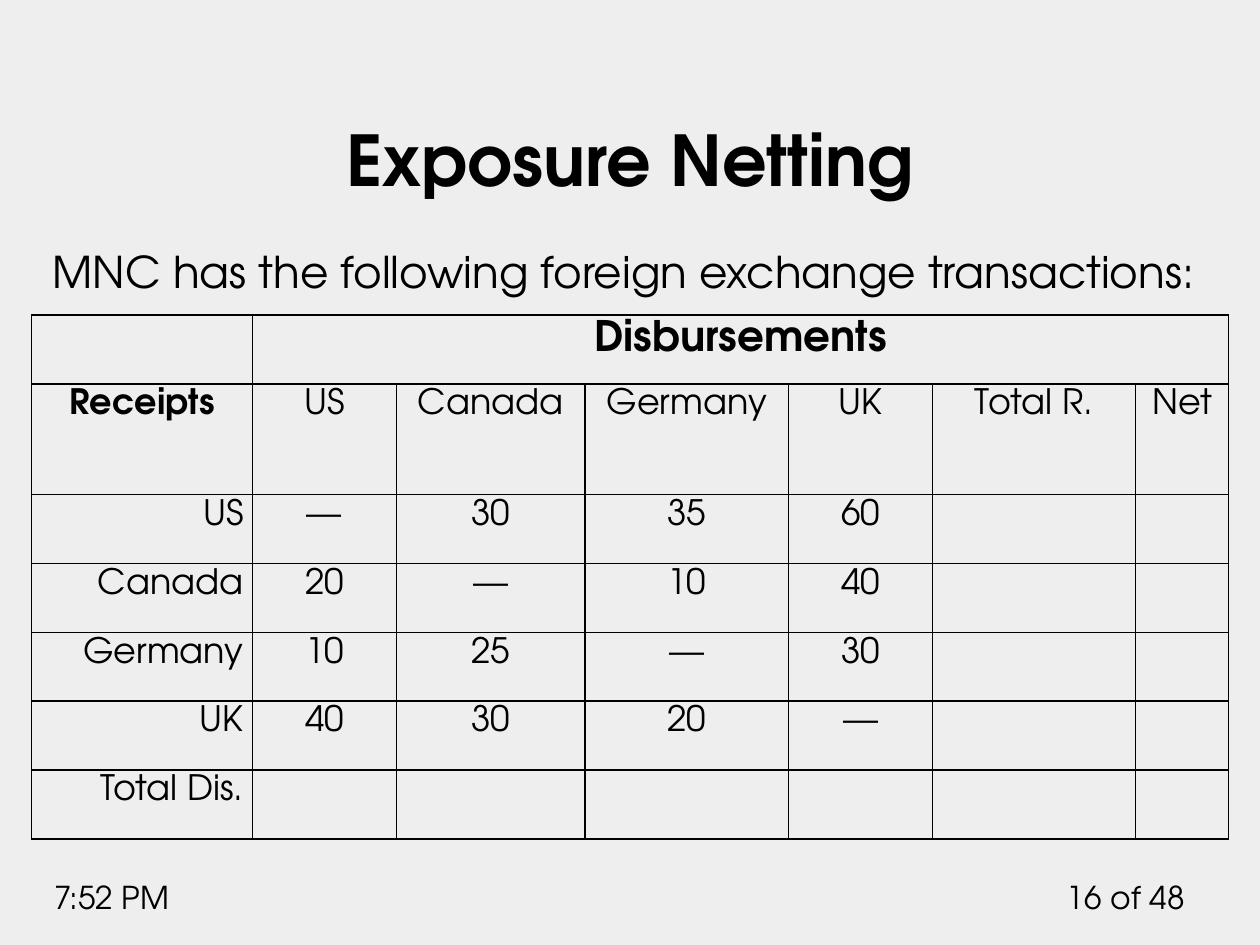
from lxml.etree import SubElement
from pptx import Presentation
from pptx.dml.color import RGBColor
from pptx.enum.text import MSO_ANCHOR, MSO_AUTO_SIZE, PP_ALIGN
from pptx.oxml import parse_xml
from pptx.oxml.ns import nsdecls, qn
from pptx.util import Cm, Pt

TITLE = "Exposure Netting"
INTRO = "MNC has the following foreign exchange transactions:"
TIME, PAGE = "7:52 PM", "16 of 48"
TABLE_ROWS = [
    ["", "Disbursements"],
    ["Receipts", "US", "Canada", "Germany", "UK", "Total R.", "Net"],
    ["US", "—", "30", "35", "60"],
    ["Canada", "20", "—", "10", "40"],
    ["Germany", "10", "25", "—", "30"],
    ["UK", "40", "30", "20", "—"],
    ["Total Dis."],
]
COLUMN_WIDTHS = [4.45, 2.9, 3.8, 4.11, 2.9, 4.09, 1.88]
ROW_HEIGHT, HEADER_HEIGHT = 1.39, 2.23
FONT = "TeX Gyre Adventor"
COLORS = {"background": "EEEEEE", "text": "000000", "border": "000000"}


def place(shape, left, top, width, height):
    shape.left, shape.top = Cm(left), Cm(top)
    shape.width, shape.height = Cm(width), Cm(height)


def write(text_frame, text, size, alignment=PP_ALIGN.LEFT, bold=False):
    paragraph = text_frame.paragraphs[0]
    paragraph.alignment = alignment
    run = paragraph.add_run()
    run.text = text
    run.font.name = FONT
    run.font.size = Pt(size)
    run.font.bold = bold
    run.font.color.rgb = RGBColor.from_string(COLORS["text"])
    return paragraph


def add_borders(cell):
    properties = cell._tc.get_or_add_tcPr()
    for position, side in enumerate(("lnL", "lnR", "lnT", "lnB")):
        properties.insert(position, parse_xml(
            f'<a:{side} {nsdecls("a")} w="12700"><a:solidFill>'
            f'<a:srgbClr val="{COLORS["border"]}"/></a:solidFill></a:{side}>'))


def add_footer(slide, text, left, width, alignment):
    box = slide.shapes.add_textbox(Cm(left), Cm(17.58), Cm(width), Cm(1.02))
    box.text_frame.word_wrap = True
    write(box.text_frame, text, 18, alignment)


def add_transactions_table(slide):
    heights = [ROW_HEIGHT] * len(TABLE_ROWS)
    heights[1] = HEADER_HEIGHT
    table = slide.shapes.add_table(
        len(heights), len(COLUMN_WIDTHS), Cm(0.64), Cm(6.35),
        Cm(sum(COLUMN_WIDTHS)), Cm(sum(heights))).table
    table.first_row = table.horz_banding = False
    for column, width in zip(table.columns, COLUMN_WIDTHS):
        column.width = Cm(width)
    for row, height in zip(table.rows, heights):
        row.height = Cm(height)
    for cell in table.iter_cells():
        cell.fill.background()
        cell.margin_left = cell.margin_right = Cm(0.18)
        cell.margin_top = cell.margin_bottom = 0
        add_borders(cell)
    table.cell(0, 1).merge(table.cell(0, len(COLUMN_WIDTHS) - 1))

    for row_index, values in enumerate(TABLE_ROWS):
        for column_index, value in enumerate(values):
            if not value:
                continue
            row_label = column_index == 0 and row_index > 1
            paragraph = write(
                table.cell(row_index, column_index).text_frame, value,
                size=24 if row_index == 0 else 20,
                alignment=PP_ALIGN.RIGHT if row_label else PP_ALIGN.CENTER,
                bold=value in ("Disbursements", "Receipts"))
            paragraph.line_spacing = 1.15


def main():
    presentation = Presentation()
    presentation.slide_width, presentation.slide_height = Cm(25.4), Cm(19.05)
    slide = presentation.slides.add_slide(presentation.slide_layouts[1])
    background = slide.background.fill
    background.solid()
    background.fore_color.rgb = RGBColor.from_string(COLORS["background"])

    title, body = slide.shapes.title, slide.placeholders[1]
    place(title, 1.27, 0.99, 22.86, 3.18)
    place(body, 0.81, 4.8, 23.75, 1.35)
    for placeholder in (title, body):
        placeholder.text_frame.auto_size = MSO_AUTO_SIZE.NONE
    title.text_frame.vertical_anchor = MSO_ANCHOR.BOTTOM
    write(title.text_frame, TITLE, 40, PP_ALIGN.CENTER, bold=True)

    intro = write(body.text_frame, INTRO, 25)
    intro.space_before = Pt(0)
    properties = intro._p.get_or_add_pPr()
    properties.set("marL", str(Cm(0.95)))
    properties.set("indent", str(-Cm(0.95)))
    SubElement(properties, qn("a:buNone"))

    add_transactions_table(slide)
    add_footer(slide, TIME, 0.85, 4.02, PP_ALIGN.LEFT)
    add_footer(slide, PAGE, 21.15, 2.98, PP_ALIGN.RIGHT)
    presentation.save("out.pptx")


if __name__ == "__main__":
    main()
